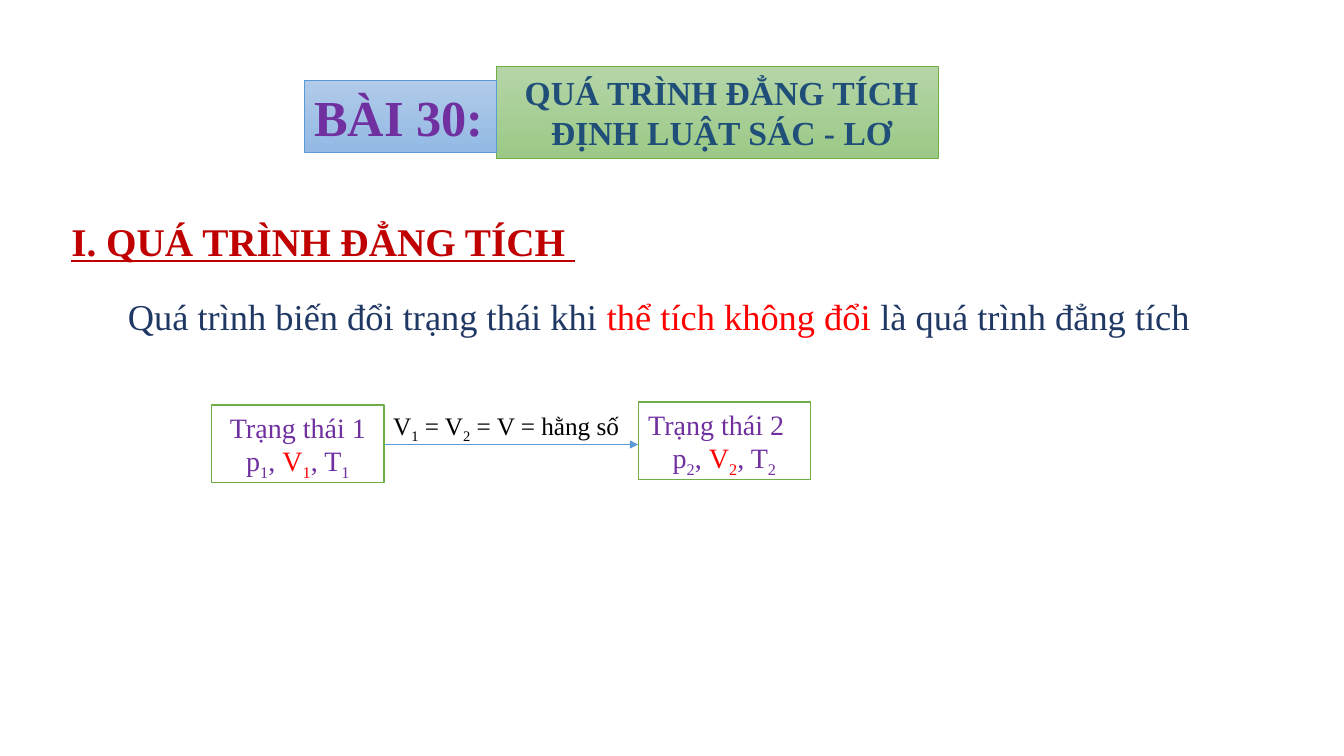
import pptx
import pptx.dml.color
import pptx.enum.shapes
import pptx.enum.text
import pptx.oxml.xmlchemy
import pptx.util

Inches = pptx.util.Inches
LEFT = pptx.enum.text.PP_ALIGN.LEFT
CENTER = pptx.enum.text.PP_ALIGN.CENTER
FONT = "Times New Roman"
PURPLE, RED, NAVY, BLACK = "7030A0", "FF0000", "203864", "000000"
BLUE, GREEN, WHITE = "5B9BD5", "70AD47", "FFFFFF"


def color(hex_string):
    return pptx.dml.color.RGBColor.from_string(hex_string)


def place(shape, left, top, width, height):
    shape.left, shape.top = Inches(left), Inches(top)
    shape.width, shape.height = Inches(width), Inches(height)


def write(shape, lines, size, aligns, bold=False, underline=False, wrap=True):
    """Fill a shape with lines, each a list of (text, colour) spans; "_" opens a subscript span."""
    frame = shape.text_frame
    frame.word_wrap = wrap
    frame.vertical_anchor = pptx.enum.text.MSO_ANCHOR.TOP
    for index, (line, align) in enumerate(zip(lines, aligns)):
        para = frame.paragraphs[0] if index == 0 else frame.add_paragraph()
        para.alignment = align
        for text, hex_string in line:
            span = para.add_run()
            span.text = text.removeprefix("_")
            span.font.name = FONT
            span.font.size = pptx.util.Pt(size)
            span.font.bold = bold
            span.font.underline = underline
            span.font.color.rgb = color(hex_string)
            if text.startswith("_"):
                span.font._element.set("baseline", "-25000")


def outline(shape, hex_string, width):
    shape.line.color.rgb = color(hex_string)
    shape.line.width = pptx.util.Pt(width)


def fill_gradient(shape, top_color, bottom_color):
    shape.fill.gradient()
    shape.fill.gradient_angle = 270
    for stop, hex_string in zip(shape.fill.gradient_stops, (top_color, bottom_color)):
        stop.color.rgb = color(hex_string)


def add_rectangle(page, *box):
    shape = page.shapes.add_shape(pptx.enum.shapes.MSO_SHAPE.RECTANGLE, *map(Inches, box))
    shape.shadow.inherit = False
    return shape


def add_text(page, box, spans, size, **style):
    shape = page.shapes.add_textbox(*map(Inches, box))
    write(shape, [spans], size, [LEFT], **style)


def add_lesson_banner(page, left, top):
    """Lesson number on the left, with the taller lesson title beside it."""
    number_width = 1.9
    number = add_rectangle(page, left, top + 0.14, number_width, 0.71)
    fill_gradient(number, "B1CBE9", "93B9E4")
    outline(number, BLUE, 0.5)
    write(number, [[("BÀI 30:", PURPLE)]], 36, [LEFT], bold=True, wrap=False)

    title = page.shapes.title
    place(title, left + number_width, top, 4.39, 0.91)
    fill_gradient(title, "B5D5A7", "9CC987")
    outline(title, GREEN, 0.5)
    lines = [" QUÁ TRÌNH ĐẲNG TÍCH", " ĐỊNH LUẬT SÁC - LƠ"]
    write(title, [[(line, "1F4E79")] for line in lines], 24, [CENTER] * 2, bold=True)


def add_state(page, left, top, number, heading_align):
    state = add_rectangle(page, left, top, 1.71, 0.77)
    state.fill.solid()
    state.fill.fore_color.rgb = color(WHITE)
    outline(state, GREEN, 1)
    index = f"_{number}"
    variables = [("p", PURPLE), (index, PURPLE), (", ", PURPLE), ("V", RED),
                 (index, RED), (", T", PURPLE), (index, PURPLE)]
    write(state, [[(f"Trạng thái {number}", PURPLE)], variables], 20, [heading_align, CENTER])


def add_arrow(page, start, end, height):
    arrow = page.shapes.add_connector(
        pptx.enum.shapes.MSO_CONNECTOR.STRAIGHT,
        Inches(start), Inches(height), Inches(end), Inches(height))
    outline(arrow, BLUE, 0.5)
    tail = pptx.oxml.xmlchemy.OxmlElement("a:tailEnd")
    tail.set("type", "triangle")
    arrow.line._get_or_add_ln().append(tail)
    arrow._element.spPr.append(pptx.oxml.xmlchemy.OxmlElement("a:effectLst"))


def add_process(page, left, top):
    """Two states joined by an arrow that carries the constant-volume condition."""
    add_state(page, left, top + 0.03, 1, CENTER)
    add_state(page, left + 4.23, top, 2, LEFT)
    add_arrow(page, left + 1.72, left + 4.23, top + 0.42)
    condition = ["V", "_1", " = V", "_2", " = V = hằng số"]
    add_text(page, (left + 1.7, top + 0.03, 2.59, 0.4),
             [(text, BLACK) for text in condition], 18)


def main():
    deck = pptx.Presentation()
    deck.slide_width, deck.slide_height = Inches(13.33), Inches(7.5)
    page = deck.slides.add_slide(deck.slide_layouts.get_by_name("Title Only"))
    add_lesson_banner(page, 3.02, 0.66)
    add_text(page, (0.61, 2.11, 6.39, 0.57), [("I. QUÁ TRÌNH ĐẲNG TÍCH ", "C00000")],
             28, bold=True, underline=True)
    add_text(page, (1.17, 2.87, 11.88, 0.54),
             [("Quá trình biến đổi trạng thái khi ", NAVY), ("thể tích không đổi ", RED),
              ("là quá trình đẳng tích", NAVY)], 26)
    add_process(page, 2.1, 3.99)
    deck.save("out.pptx")


if __name__ == "__main__":
    main()
